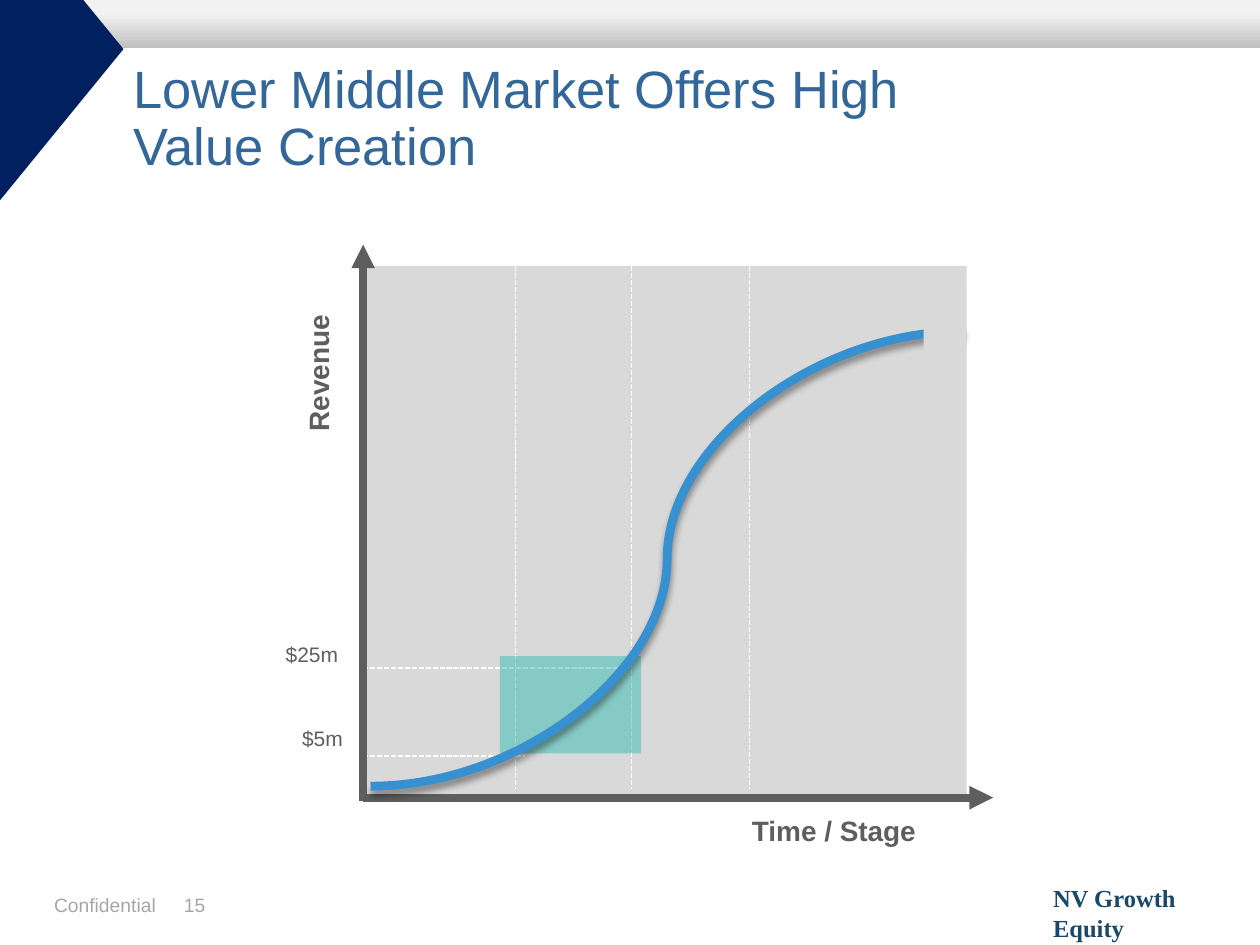
from lxml import etree
from pptx import Presentation
from pptx.dml.color import RGBColor
from pptx.enum import dml, shapes, text
from pptx.oxml import ns
from pptx.util import Cm, Pt

GRAY, PLOT, WHITE = "5E5E5E", "D9D9D9", "FFFFFF"
FOOTER = "A5A6A6"


def color(hex_code):
    return RGBColor.from_string(hex_code)


def add_xml(parent, tag, **attributes):
    return etree.SubElement(parent, ns.qn(tag), attributes)


def paint(shape, fill, outline=None, opacity=None):
    shape.shadow.inherit = False
    shape.fill.solid()
    shape.fill.fore_color.rgb = color(fill)
    if opacity is not None:
        rgb = shape.fill._xPr.find(".//" + ns.qn("a:srgbClr"))
        add_xml(rgb, "a:alpha", val=str(opacity * 1000))
    if outline:
        shape.line.color.rgb = color(outline)
        shape.line.width = Pt(2)
    else:
        shape.line.fill.background()


def add_rect(slide, left, top, width, height, fill, **style):
    rect = slide.shapes.add_shape(
        shapes.MSO_SHAPE.RECTANGLE, Cm(left), Cm(top), Cm(width), Cm(height))
    paint(rect, fill, **style)
    return rect


def add_line(slide, start, end, stroke, width, dashed=False, arrow=False,
             kind=shapes.MSO_CONNECTOR.STRAIGHT):
    """Draw a connector and return its empty effect list."""
    line = slide.shapes.add_connector(kind, *map(Cm, start + end))
    line.line.color.rgb = color(stroke)
    line.line.width = Pt(width)
    if dashed:
        line.line.dash_style = dml.MSO_LINE.SQUARE_DOT
    properties = line._element.spPr
    if arrow:
        add_xml(properties.find(ns.qn("a:ln")), "a:tailEnd", type="triangle")
    return add_xml(properties, "a:effectLst")


def add_text(slide, words, left, top, width, height, size, ink, bold=False,
             font="Arial", wrap=False, inset=True, rotation=0):
    box = slide.shapes.add_textbox(Cm(left), Cm(top), Cm(width), Cm(height))
    box.rotation = rotation
    frame = box.text_frame
    frame.word_wrap = wrap
    if not inset:
        frame.margin_left = frame.margin_right = 0
        frame.margin_top = frame.margin_bottom = 0
    frame.text = words
    style = frame.paragraphs[0].runs[0].font
    style.name, style.size, style.bold = font, Pt(size), bold
    style.color.rgb = color(ink)
    return frame


def add_header(slide):
    # Gradient bar, light at the top
    bar = add_rect(slide, 0, 0, 25.4, 0.97, PLOT)
    bar.fill.gradient()
    bar.fill.gradient_angle = 90
    for stop, (position, shade) in zip(
            bar.fill.gradient_stops, [(0, "BFBFBF"), (0.72, "F2F2F2")]):
        stop.position = position
        stop.color.rgb = color(shade)

    # Corner flag
    corners = [(0, 0), (1.68, 0), (2.49, 0.99), (0, 4.04)]
    points = [(Cm(x), Cm(y)) for x, y in corners]
    outline = slide.shapes.build_freeform(*points[0])
    outline.add_line_segments(points[1:], close=True)
    paint(outline.convert_to_shape(), "002060")

    title = add_text(slide, "Lower Middle Market Offers High Value Creation",
                     2.69, 1.12, 16.41, 2.59, 30, "336699",
                     wrap=True, inset=False)
    title.vertical_anchor = text.MSO_ANCHOR.MIDDLE
    title.paragraphs[0].line_spacing = 0.9


def add_growth_curve(slide):
    left, top, width, height = 7.32, 5.36, 12.17, 10.72
    bottom = top + height

    # Plot area with guide lines
    add_rect(slide, left, top, width, height, PLOT)
    for x in (10.39, 12.73, 15.11):
        add_line(slide, (x, top), (x, 15.9), WHITE, 1, dashed=True)
    for y, right in ((15.24, 10.59), (13.46, 12.7)):
        add_line(slide, (left, y), (right, y), WHITE, 1, dashed=True)

    # Axis titles and revenue levels
    add_text(slide, "Time / Stage", 14.91, 16.28, 4.22, 1.02, 16, GRAY, bold=True)
    add_text(slide, "Revenue", 4.88, 6.86, 3.15, 1.02, 16, GRAY, bold=True,
             rotation=270)
    add_text(slide, "$5m", 5.84, 14.5, 1.47, 0.84, 12, GRAY)
    add_text(slide, "$25m", 5.51, 12.8, 1.73, 0.84, 12, GRAY)

    # Lower middle market zone
    add_rect(slide, 10.08, 13.23, 2.84, 1.96, "19B7AE", opacity=43)

    # Axes
    add_line(slide, (left, 16.15), (left, 4.93), GRAY, 4.5, arrow=True)
    add_line(slide, (left, bottom), (20.02, bottom), GRAY, 4.5, arrow=True)

    # S-curve with a soft shadow; its end is masked by a plot-coloured strip
    effects = add_line(slide, (7.47, 15.85), (19.43, 6.68), "3790CF", 5,
                       kind=shapes.MSO_CONNECTOR.CURVE)
    shadow = add_xml(effects, "a:outerShdw", blurRad=str(Pt(4)),
                     dist=str(Pt(3)), dir="5400000", rotWithShape="0")
    add_xml(add_xml(shadow, "a:srgbClr", val="000000"), "a:alpha", val="40000")
    add_rect(slide, 18.62, 5.79, 0.86, 5.26, PLOT)


def add_footer(slide):
    add_text(slide, "15", 3.71, 18.01, 1.6, 0.74, 11, FOOTER,
             wrap=True, inset=False)
    add_text(slide, "Confidential", 1.09, 18.01, 2.39, 0.74, 11, FOOTER,
             wrap=True, inset=False)
    add_rect(slide, 21.31, 17.12, 3.81, 1.73, WHITE, outline=WHITE)
    add_text(slide, "NV Growth Equity", 20.98, 17.68, 4.52, 0.86, 14, "19486A",
             bold=True, font="Times New Roman")


def main():
    deck = Presentation()
    deck.slide_width, deck.slide_height = Cm(25.4), Cm(19.05)
    slide = deck.slides.add_slide(deck.slide_layouts[6])
    add_header(slide)
    add_growth_curve(slide)
    add_footer(slide)
    deck.save("out.pptx")


if __name__ == "__main__":
    main()
